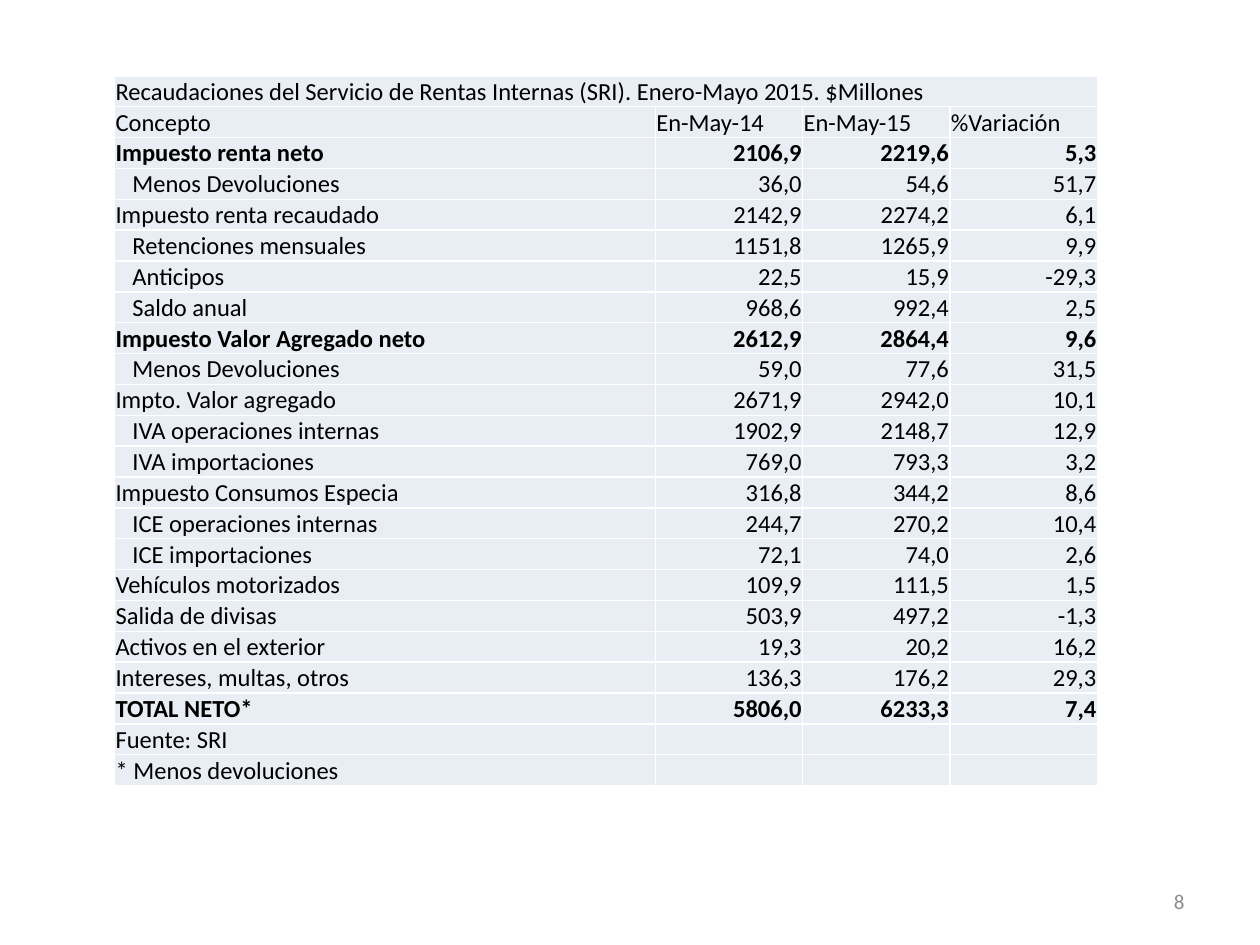
"""Build the slide with the SRI tax revenue table, January to May 2015."""
from lxml.etree import SubElement
from pptx import Presentation
from pptx.dml.color import RGBColor
from pptx.enum.text import MSO_ANCHOR as Anchor, PP_ALIGN as Align
from pptx.oxml.ns import qn
from pptx.util import Cm, Pt

BLACK = RGBColor(0x00, 0x00, 0x00)
WHITE = RGBColor(0xFF, 0xFF, 0xFF)
GRAY = RGBColor(0x8C, 0x8C, 0x8C)
PALE_BLUE = RGBColor(0xE9, 0xED, 0xF4)

TITLE = "Recaudaciones del Servicio de Rentas Internas (SRI). Enero-Mayo 2015. $Millones"
HEADINGS = ["Concepto", "En-May-14", "En-May-15", "%Variación"]
TOTAL, ITEM, DETAIL = "total", "item", "detail"
REVENUES = [
    (TOTAL, "Impuesto renta neto", "2106,9", "2219,6", "5,3"),
    (DETAIL, "Menos Devoluciones", "36,0", "54,6", "51,7"),
    (ITEM, "Impuesto renta recaudado", "2142,9", "2274,2", "6,1"),
    (DETAIL, "Retenciones mensuales", "1151,8", "1265,9", "9,9"),
    (DETAIL, "Anticipos", "22,5", "15,9", "-29,3"),
    (DETAIL, "Saldo anual", "968,6", "992,4", "2,5"),
    (TOTAL, "Impuesto Valor Agregado neto", "2612,9", "2864,4", "9,6"),
    (DETAIL, "Menos Devoluciones", "59,0", "77,6", "31,5"),
    (ITEM, "Impto. Valor agregado", "2671,9", "2942,0", "10,1"),
    (DETAIL, "IVA operaciones internas", "1902,9", "2148,7", "12,9"),
    (DETAIL, "IVA importaciones", "769,0", "793,3", "3,2"),
    (ITEM, "Impuesto Consumos Especia", "316,8", "344,2", "8,6"),
    (DETAIL, "ICE operaciones internas", "244,7", "270,2", "10,4"),
    (DETAIL, "ICE importaciones", "72,1", "74,0", "2,6"),
    (ITEM, "Vehículos motorizados", "109,9", "111,5", "1,5"),
    (ITEM, "Salida de divisas", "503,9", "497,2", "-1,3"),
    (ITEM, "Activos en el exterior", "19,3", "20,2", "16,2"),
    (ITEM, "Intereses, multas, otros", "136,3", "176,2", "29,3"),
    (TOTAL, "TOTAL NETO*", "5806,0", "6233,3", "7,4"),
]
NOTES = ["Fuente: SRI", "* Menos devoluciones"]
COLUMN_WIDTHS = [Cm(10.9), Cm(2.97), Cm(2.97), Cm(2.97)]
ROW_HEIGHT = Cm(0.62)
INSET = Cm(0.02)
INDENT = Cm(0.34)


def set_font(paragraph, size, color, bold=False):
    paragraph.font.name = "Calibri"
    paragraph.font.size = Pt(size)
    paragraph.font.color.rgb = color
    paragraph.font.bold = bold


def add_borders(cell):
    for side in ("a:lnL", "a:lnR", "a:lnT", "a:lnB"):
        border = SubElement(cell._tc.get_or_add_tcPr(), qn(side), w=str(Pt(1)))
        fill = SubElement(border, qn("a:solidFill"))
        SubElement(fill, qn("a:srgbClr"), val=str(WHITE))


prs = Presentation()
prs.slide_width, prs.slide_height = Cm(25.4), Cm(19.05)
slide = prs.slides.add_slide(prs.slide_layouts[6])

blanks = [""] * 3
rows = [(ITEM, TITLE, *blanks), (ITEM, *HEADINGS), *REVENUES]
rows += [(ITEM, note, *blanks) for note in NOTES]

revenue_table = slide.shapes.add_table(
    len(rows), len(COLUMN_WIDTHS), Cm(2.31), Cm(1.53),
    sum(COLUMN_WIDTHS), ROW_HEIGHT * len(rows)).table
revenue_table.first_row = revenue_table.horz_banding = False
for column, width in zip(revenue_table.columns, COLUMN_WIDTHS):
    column.width = width

for row_index, (level, *texts) in enumerate(rows):
    revenue_table.rows[row_index].height = ROW_HEIGHT
    for column_index, text in enumerate(texts):
        cell = revenue_table.cell(row_index, column_index)
        cell.text = text
        cell.vertical_anchor = Anchor.BOTTOM
        cell.margin_left = cell.margin_right = cell.margin_top = INSET
        cell.margin_bottom = 0
        if level == DETAIL and column_index == 0:
            cell.margin_left = INSET + INDENT
        add_borders(cell)
        cell.fill.solid()
        cell.fill.fore_color.rgb = PALE_BLUE
        entry = cell.text_frame.paragraphs[0]
        set_font(entry, 14, BLACK, level == TOTAL)
        if row_index > 1 and column_index > 0:
            entry.alignment = Align.RIGHT

revenue_table.cell(0, 0).merge(revenue_table.cell(0, len(COLUMN_WIDTHS) - 1))

page_number = slide.shapes.add_textbox(Cm(18.2), Cm(17.66), Cm(5.93), Cm(1.01)).text_frame
page_number.word_wrap = True
page_number.vertical_anchor = Anchor.MIDDLE
page_number.text = "8"
page_number.paragraphs[0].alignment = Align.RIGHT
set_font(page_number.paragraphs[0], 12, GRAY)

prs.save("out.pptx")
